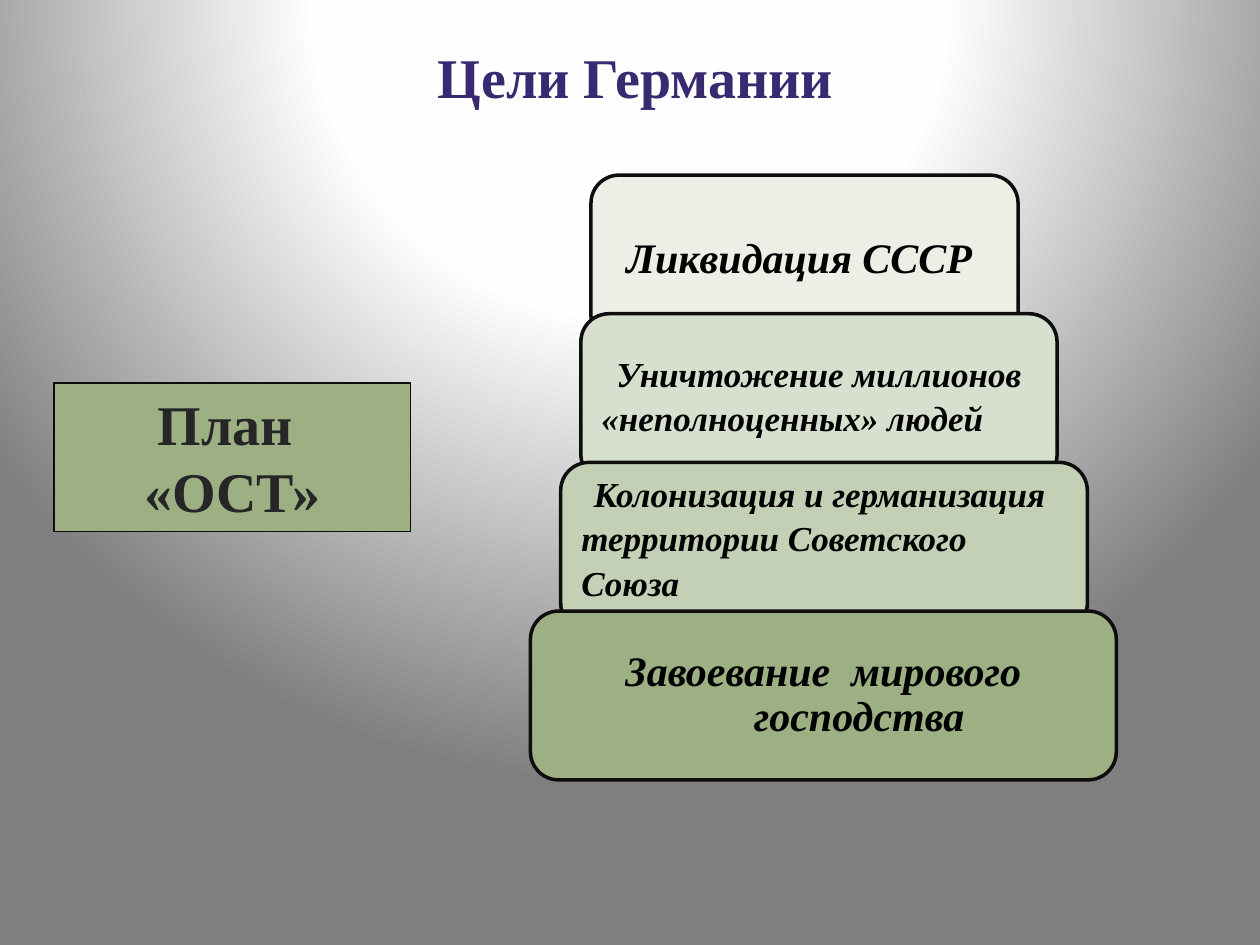
from lxml.etree import SubElement
from pptx import Presentation
from pptx.dml.color import RGBColor
from pptx.enum.shapes import MSO_SHAPE
from pptx.enum.text import MSO_ANCHOR, MSO_AUTO_SIZE, PP_ALIGN
from pptx.oxml.ns import qn
from pptx.util import Inches, Pt

FONT = "Times New Roman"
COLORS = {
    "title": "382971", "plan_text": "262626", "step_text": "000000",
    "outline": "0D0D0D", "plan": "9CB084",
}
BACKGROUND_STOPS = [(0, "FFFFFF"), (40, "FEFEFE"), (100, "7F7F7F")]
STEP_HEIGHT = 1.34
STEPS = [
    (4.69, 1.39, 3.39, "EBEFE6", 24, MSO_ANCHOR.MIDDLE, ["Ликвидация СССР "]),
    (4.61, 2.49, 3.78, "D7DFCE", 20, MSO_ANCHOR.MIDDLE,
     ["Уничтожение миллионов", "«неполноценных» людей"]),
    (4.45, 3.67, 4.18, "C4D0B5", 20, MSO_ANCHOR.TOP,
     ["Колонизация и германизация ", "территории Советского", "Союза"]),
    (4.21, 4.85, 4.65, "9CB084", 24, MSO_ANCHOR.MIDDLE,
     ["Завоевание  мирового господства "]),
]


def set_background(slide):
    """Fill the slide with a circular gradient centred above its top edge."""
    fill = slide.background.fill
    fill.gradient()
    gradient = slide.background._cSld.find(".//" + qn("a:gradFill"))
    for child in list(gradient):
        gradient.remove(child)
    stops = SubElement(gradient, qn("a:gsLst"))
    for position, color in BACKGROUND_STOPS:
        stop = SubElement(stops, qn("a:gs"), pos=str(position * 1000))
        SubElement(stop, qn("a:srgbClr"), val=color)
    circle = SubElement(gradient, qn("a:path"), {"path": "circle"})
    SubElement(circle, qn("a:fillToRect"), l="50000", t="-80000", r="50000", b="180000")


def write_text(shape, lines, *, size, color, italic=False, anchor=MSO_ANCHOR.TOP,
               auto_size=MSO_AUTO_SIZE.NONE):
    """Write bold lines into a shape and return its paragraphs."""
    frame = shape.text_frame
    frame.text = "\n".join(lines)
    frame.word_wrap = True
    frame.auto_size = auto_size
    frame.vertical_anchor = anchor
    for paragraph in frame.paragraphs:
        paragraph.alignment = PP_ALIGN.CENTER
        font = paragraph.runs[0].font
        font.name, font.size = FONT, Pt(size)
        font.bold, font.italic = True, italic
        font.color.rgb = RGBColor.from_string(color)
    return frame.paragraphs


def add_box(slide, kind, left, top, width, height, *, fill, line_width):
    """Add a filled, outlined shape without a shadow."""
    shape = slide.shapes.add_shape(
        kind, Inches(left), Inches(top), Inches(width), Inches(height))
    shape.shadow.inherit = False
    shape.fill.solid()
    shape.fill.fore_color.rgb = RGBColor.from_string(fill)
    shape.line.color.rgb = RGBColor.from_string(COLORS["outline"])
    shape.line.width = Pt(line_width)
    return shape


def add_title(slide, text):
    """Place and format the title placeholder."""
    title = slide.shapes.title
    title.left, title.top = Inches(0.83), Inches(0.29)
    title.width, title.height = Inches(8.43), Inches(0.64)
    write_text(title, [text], size=32, color=COLORS["title"],
               auto_size=MSO_AUTO_SIZE.SHAPE_TO_FIT_TEXT)


def add_plan(slide):
    """Add the box that names the plan."""
    box = add_box(slide, MSO_SHAPE.RECTANGLE, 0.43, 3.04, 2.83, 1.18,
                  fill=COLORS["plan"], line_width=0.75)
    write_text(box, ["План ", "«ОСТ»"], size=32, color=COLORS["plan_text"],
               auto_size=MSO_AUTO_SIZE.SHAPE_TO_FIT_TEXT)


def add_step(slide, left, top, width, fill, size, anchor, lines):
    """Add one step of the pyramid, its first line centred and the rest left."""
    box = add_box(slide, MSO_SHAPE.ROUNDED_RECTANGLE, left, top, width, STEP_HEIGHT,
                  fill=fill, line_width=2)
    paragraphs = write_text(box, lines, size=size, color=COLORS["step_text"],
                            italic=True, anchor=anchor)
    for index, paragraph in enumerate(paragraphs):
        paragraph.alignment = PP_ALIGN.LEFT if index else PP_ALIGN.CENTER
        paragraph.line_spacing = 0.9
        paragraph.space_before = Pt(size * 0.2)
        properties = paragraph._p.get_or_add_pPr()
        properties.set("marL", str(Inches(0.65)))
        properties.set("indent", str(Inches(-0.65)))


def main():
    """Build the slide and save it."""
    presentation = Presentation()
    presentation.slide_width, presentation.slide_height = Inches(10), Inches(7.5)
    slide = presentation.slides.add_slide(presentation.slide_layouts[5])
    set_background(slide)
    add_title(slide, "Цели Германии")
    add_plan(slide)
    for step in STEPS:
        add_step(slide, *step)
    presentation.save("out.pptx")


if __name__ == "__main__":
    main()
